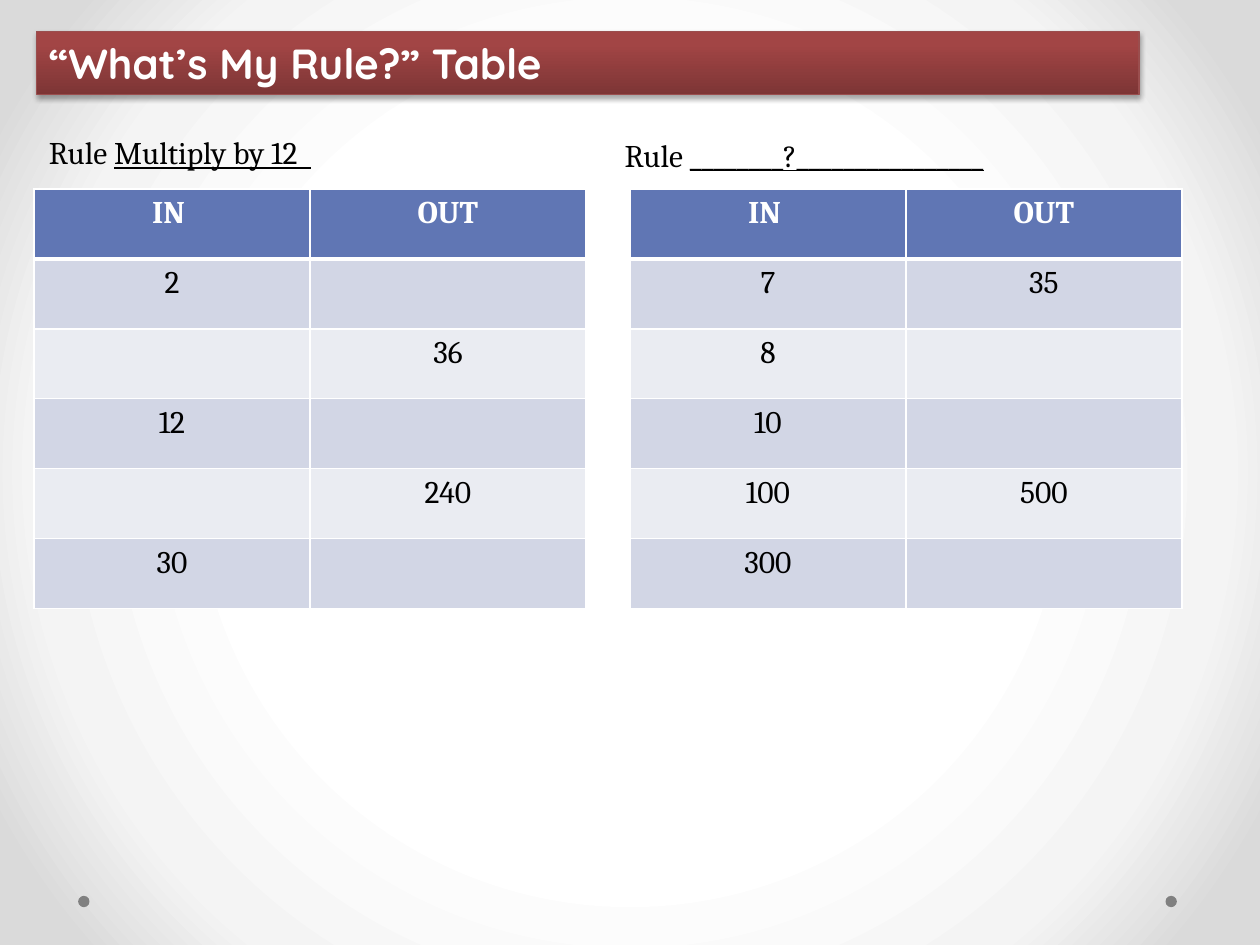
from pptx import Presentation
from pptx.dml.color import RGBColor
from pptx.enum.shapes import MSO_SHAPE as Shape
from pptx.enum.text import MSO_ANCHOR as Anchor, PP_ALIGN as Align
from pptx.oxml import parse_xml
from pptx.oxml.ns import nsdecls
from pptx.util import Inches, Pt

WHITE = RGBColor(0xFF, 0xFF, 0xFF)
BLACK = RGBColor(0, 0, 0)
GRAY = RGBColor(0x80, 0x80, 0x80)
BLUE = RGBColor(0x60, 0x76, 0xB4)
BAND_DARK = RGBColor(0xD2, 0xD6, 0xE5)
BAND_LIGHT = RGBColor(0xEA, 0xEC, 0xF2)
TITLE_EDGE = RGBColor(0x9A, 0x4E, 0x4E)
TITLE_STOPS = [(0, RGBColor(0x7D, 0x35, 0x35)),
               (80, RGBColor(0xA2, 0x45, 0x45)),
               (100, RGBColor(0xA4, 0x43, 0x43))]
BACKGROUND_STOPS = [(50, WHITE),
                    (76, RGBColor(0xF4, 0xF4, 0xF4)),
                    (92, RGBColor(0xDA, 0xDA, 0xDA))]

UPWARD = '<a:lin ang="16200000" scaled="0"/>'
RADIAL = ('<a:path path="circle"><a:fillToRect l="50000" t="50000" '
          'r="50000" b="50000"/></a:path>')
SOFT_SHADOW = (f'<a:effectLst {nsdecls("a")}><a:outerShdw blurRad="39370" '
               'dist="22860" dir="5400000" rotWithShape="0">'
               '<a:srgbClr val="000000"><a:alpha val="35000"/></a:srgbClr>'
               '</a:outerShdw></a:effectLst>')


def gradient(stops, direction):
    stop_xml = "".join(f'<a:gs pos="{pos * 1000}"><a:srgbClr val="{color}"/></a:gs>'
                       for pos, color in stops)
    return parse_xml(f'<a:gradFill {nsdecls("a")} rotWithShape="1">'
                     f'<a:gsLst>{stop_xml}</a:gsLst>{direction}</a:gradFill>')


class RuleSlide:
    body_font = "Cambria"
    title_font = "Quicksand"
    body_size = Pt(18)
    title_size = Pt(24)

    def __init__(self, deck):
        self.slide = deck.slides.add_slide(deck.slide_layouts[5])

    def style(self, run, color=BLACK, bold=False, underline=False):
        run.font.name = self.body_font
        run.font.size = self.body_size
        run.font.color.rgb = color
        run.font.bold = bold
        run.font.underline = underline

    def background(self, stops):
        self.slide.background.fill.solid()
        properties = self.slide.element.xpath(".//p:bgPr")[0]
        properties.replace(properties[0], gradient(stops, RADIAL))

    def title(self, text, left, top, width, height):
        banner = self.slide.shapes.title
        banner.left, banner.top = Inches(left), Inches(top)
        banner.width, banner.height = Inches(width), Inches(height)
        properties = banner.element.spPr
        properties.append(gradient(TITLE_STOPS, UPWARD))
        banner.line.color.rgb = TITLE_EDGE
        banner.line.width = Pt(0.75)
        properties.append(parse_xml(SOFT_SHADOW))
        banner.text_frame.text = text
        banner.text_frame.vertical_anchor = Anchor.MIDDLE
        heading = banner.text_frame.paragraphs[0]
        heading.alignment = Align.LEFT
        run = heading.runs[0]
        self.style(run, WHITE, bold=True)
        run.font.name, run.font.size = self.title_font, self.title_size

    def dot(self, left, top, size):
        mark = self.slide.shapes.add_shape(
            Shape.OVAL, Inches(left), Inches(top), Inches(size), Inches(size))
        mark.shadow.inherit = False
        mark.fill.solid()
        mark.fill.fore_color.rgb = GRAY
        mark.line.fill.background()

    def rule(self, answer, left, top):
        label = self.slide.shapes.add_textbox(
            Inches(left), Inches(top), Inches(4.38), Inches(0.4))
        label.text_frame.word_wrap = True
        line = label.text_frame.paragraphs[0]
        for text, underline in (("Rule ", False), (answer, True)):
            run = line.add_run()
            run.text = text
            self.style(run, underline=underline)

    def borders(self, cell, top, bottom):
        properties = cell._tc.get_or_add_tcPr()
        widths = {"lnL": 1, "lnR": 1, "lnT": top, "lnB": bottom}
        for position, (side, points) in enumerate(widths.items()):
            properties.insert(position, parse_xml(
                f'<a:{side} {nsdecls("a")} w="{Pt(points)}"><a:solidFill>'
                f'<a:srgbClr val="{WHITE}"/></a:solidFill></a:{side}>'))

    def in_out_table(self, pairs, left, top):
        rows = [("IN ", "OUT")] + pairs
        grid = self.slide.shapes.add_table(
            len(rows), 2, Inches(left), Inches(top),
            Inches(4.38), Inches(3.33)).table
        for r, pair in enumerate(rows):
            header = r == 0
            band = BLUE if header else BAND_DARK if r % 2 else BAND_LIGHT
            for c, value in enumerate(pair):
                cell = grid.cell(r, c)
                cell.fill.solid()
                cell.fill.fore_color.rgb = band
                self.borders(cell, top=3 if r == 1 else 1, bottom=3 if header else 1)
                cell.text_frame.text = value
                entry = cell.text_frame.paragraphs[0]
                entry.alignment = Align.CENTER
                entry.font.size = self.body_size
                for run in entry.runs:
                    self.style(run, WHITE if header else BLACK, bold=header)


def main():
    deck = Presentation()
    deck.slide_width, deck.slide_height = Inches(10), Inches(7.5)
    page = RuleSlide(deck)

    # Backdrop and footer dots
    page.background(BACKGROUND_STOPS)
    for left in (9.25, 0.62):
        page.dot(left, 7.11, 0.09)

    # Title banner
    page.title("“What’s My Rule?” Table", 0.29, 0.25, 8.75, 0.5)

    # Known rule, with gaps to fill in
    page.rule("Multiply by 12  ", 0.29, 1.01)
    page.in_out_table([("2", ""), ("", "36"), ("12", ""), ("", "240"), ("30", "")],
                      0.27, 1.5)

    # Rule to discover
    page.rule("________?________________", 4.86, 1.03)
    page.in_out_table([("7", "35"), ("8", ""), ("10", ""), ("100", "500"), ("300", "")],
                      5, 1.5)

    deck.save("out.pptx")


if __name__ == "__main__":
    main()
